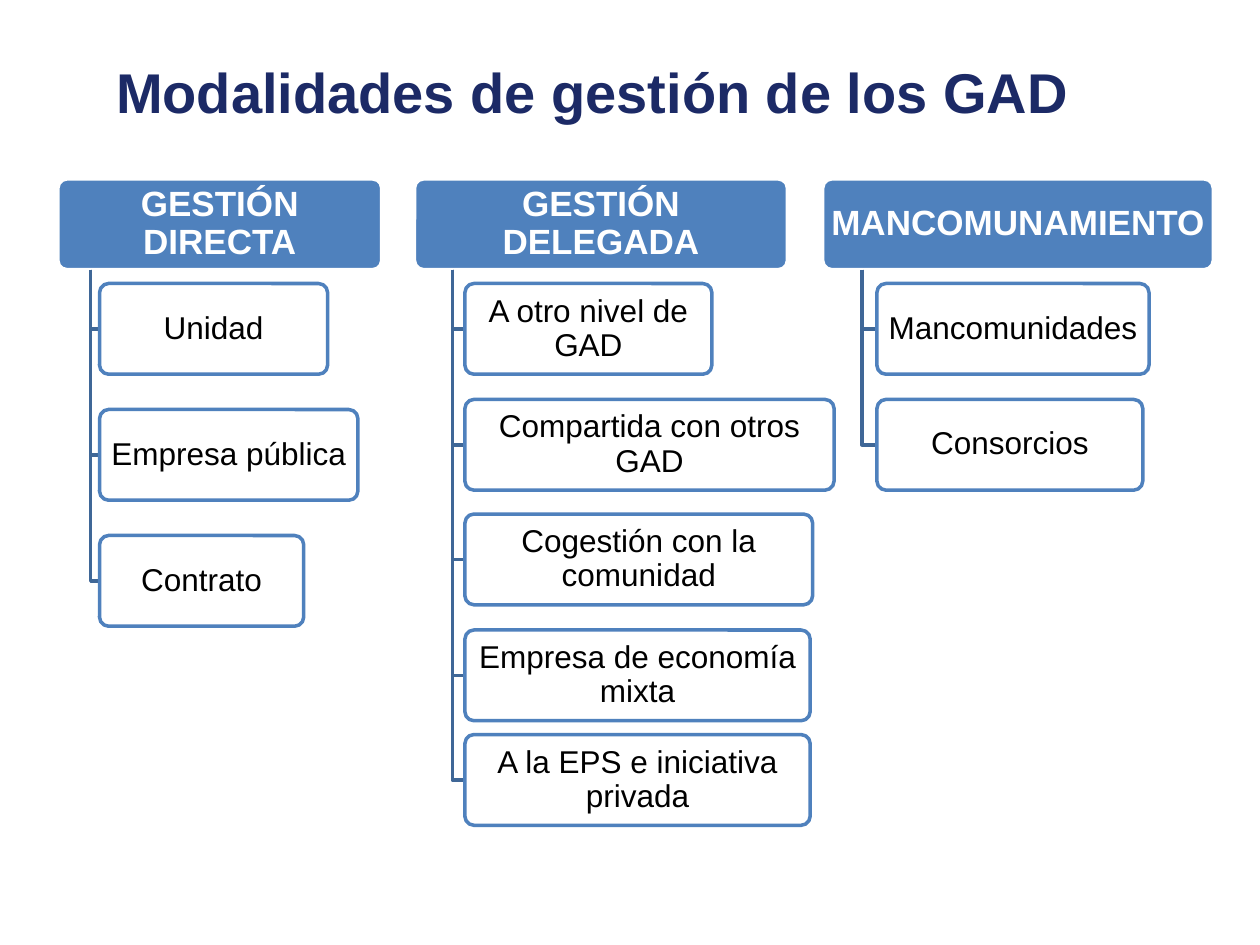
from dataclasses import dataclass

from lxml.etree import SubElement
from pptx import Presentation
from pptx.dml.color import RGBColor
from pptx.enum.shapes import MSO_SHAPE
from pptx.enum.text import MSO_ANCHOR, PP_ALIGN
from pptx.oxml.ns import qn
from pptx.util import Inches, Pt


@dataclass(frozen=True)
class Theme:
    font: str = "Arial"
    navy: str = "1C2A66"
    blue: str = "4F81BD"
    branch: str = "3F6797"
    white: str = "FFFFFF"
    black: str = "000000"
    title_size: int = 32
    head_size: int = 20
    item_size: int = 18
    line_width: int = 2


class SlideBuilder:
    def __init__(self, slide, theme):
        self.s = slide
        self.theme = theme

    def set_text(self, tf, text, size, color, bold=False):
        frame = {"word_wrap": True, "vertical_anchor": MSO_ANCHOR.MIDDLE}
        for name, value in frame.items():
            setattr(tf, name, value)
        p = tf.paragraphs[0]
        p.alignment = PP_ALIGN.CENTER
        r = p.add_run()
        r.text = text
        style = {"name": self.theme.font, "size": Pt(size), "bold": bold}
        for name, value in style.items():
            setattr(r.font, name, value)
        r.font.color.rgb = RGBColor.from_string(color)
        return p

    def outline(self, sp, color):
        sp.shadow.inherit = False
        sp.line.color.rgb = RGBColor.from_string(color)
        sp.line.width = Pt(self.theme.line_width)

    def title(self, text, left, top, width, height):
        sp = self.s.shapes.title
        place = {"left": left, "top": top, "width": width, "height": height}
        for name, value in place.items():
            setattr(sp, name, Inches(value))
        self.set_text(sp.text_frame, text, self.theme.title_size,
                      self.theme.navy, True)

    def box(self, text, left, top, width, fill, line, size, color,
            bold=False, opacity=100):
        sp = self.s.shapes.add_shape(
            MSO_SHAPE.ROUNDED_RECTANGLE, Inches(left), Inches(top),
            Inches(width), Inches(BOX_H))
        sp.adjustments[0] = 0.1
        sp.fill.solid()
        sp.fill.fore_color.rgb = RGBColor.from_string(fill)
        if opacity < 100:
            clr = sp._element.spPr.find(qn("a:solidFill"))[0]
            SubElement(clr, qn("a:alpha"), val=str(opacity * 1000))
        self.outline(sp, line)
        tf = sp.text_frame
        margins = {"margin_left": 0.04, "margin_right": 0.04,
                   "margin_top": 0.03, "margin_bottom": 0.03}
        for name, value in margins.items():
            setattr(tf, name, Inches(value))
        p = self.set_text(tf, text, size, color, bold)
        p.line_spacing = 0.9

    def header(self, text, left, width):
        t = self.theme
        self.box(text, left, HEAD_TOP, width, t.blue, t.white,
                 t.head_size, t.white, bold=True)

    def item(self, text, left, top, width):
        t = self.theme
        self.box(text, left, top, width, t.white, t.blue,
                 t.item_size, t.black, opacity=90)

    def elbow(self, x, top, right, bottom):
        fb = self.s.shapes.build_freeform(Inches(x), Inches(top))
        fb.add_line_segments([(Inches(x), Inches(bottom)),
                              (Inches(right), Inches(bottom))], close=False)
        sp = fb.convert_to_shape()
        sp.fill.background()
        self.outline(sp, self.theme.branch)

    def column(self, head, left, width, trunk, indent, items):
        self.header(head, left, width)
        for text, top, item_width in items:
            self.elbow(trunk, HEAD_TOP + BOX_H, indent, top + BOX_H / 2)
            self.item(text, indent, top, item_width)


HEAD_TOP = 1.42
BOX_H = 0.72

# Header, left, width, trunk x, item left, items (text, top, width)
COLUMNS = [
    ("GESTIÓN DIRECTA", 0.46, 2.57, 0.72, 0.79, [
        ("Unidad", 2.25, 1.81),
        ("Empresa pública", 3.25, 2.05),
        ("Contrato", 4.25, 1.62)]),
    ("GESTIÓN DELEGADA", 3.29, 2.96, 3.59, 3.69, [
        ("A otro nivel de GAD", 2.25, 1.96),
        ("Compartida con otros GAD", 3.17, 2.93),
        ("Cogestión con la comunidad", 4.08, 2.76),
        ("Empresa de economía mixta", 5.0, 2.74),
        ("A la EPS e iniciativa privada", 5.83, 2.74)]),
    ("MANCOMUNAMIENTO", 6.53, 3.1, 6.84, 6.96, [
        ("Mancomunidades", 2.25, 2.16),
        ("Consorcios", 3.17, 2.11)]),
]


def main():
    prs = Presentation()
    prs.slide_width, prs.slide_height = Inches(10), Inches(7.5)
    s = prs.slides.add_slide(prs.slide_layouts[5])
    builder = SlideBuilder(s, Theme())

    # Title
    builder.title("Modalidades de gestión de los GAD", 0.58, 0.25, 8.25, 0.95)

    # Hierarchy columns
    for column in COLUMNS:
        builder.column(*column)

    prs.save("out.pptx")


if __name__ == "__main__":
    main()
